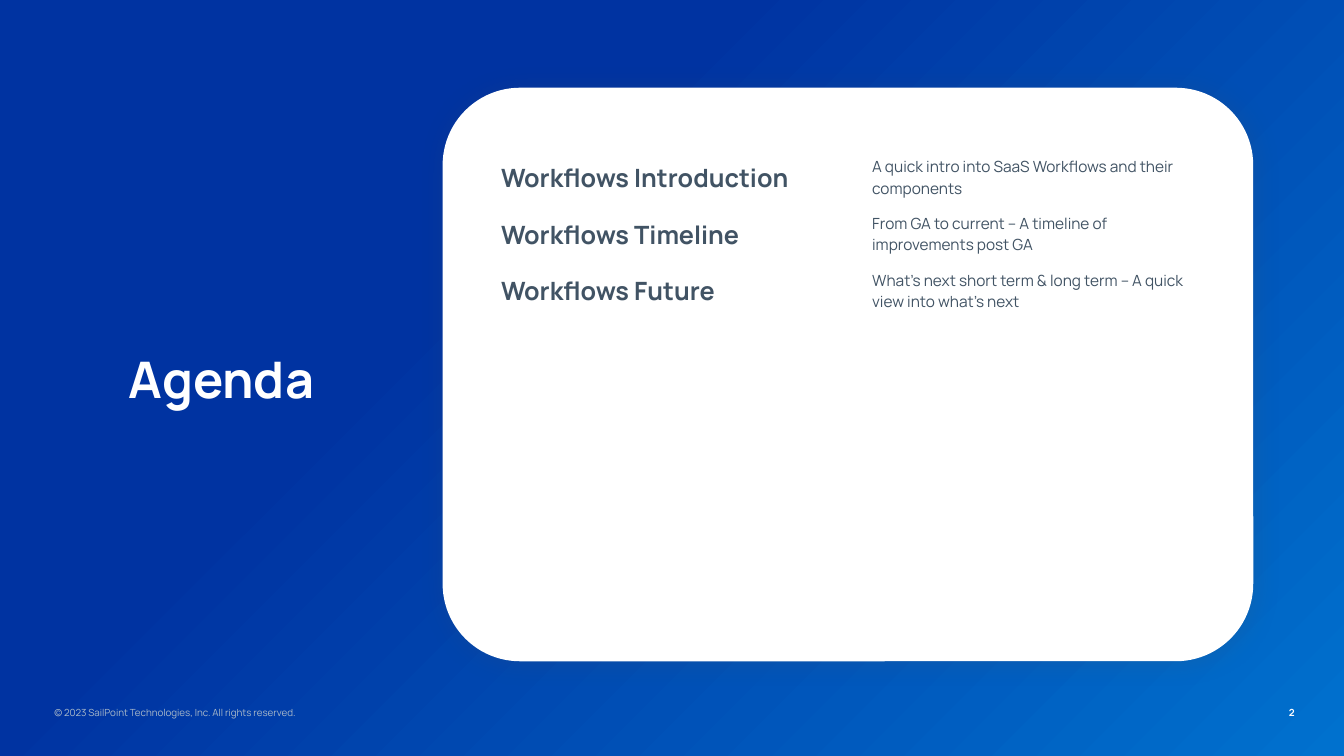
from lxml import etree
from pptx import Presentation
from pptx.dml.color import RGBColor
from pptx.enum import shapes, text
from pptx.oxml import ns
from pptx.util import Inches, Pt

# Content
TITLE = "Agenda"
AGENDA = [
    ("Workflows Introduction", "A quick intro into SaaS Workflows and their components"),
    ("Workflows Timeline", "From GA to current – A timeline of improvements post GA"),
    ("Workflows Future", "What’s next short term & long term – A quick view into what’s next"),
]
COPYRIGHT = "© 2023 SailPoint Technologies, Inc. All rights reserved."
PAGE_NUMBER = "2"

# Style
FONT = "Manrope"
NAVY = RGBColor(0x00, 0x33, 0xA1)
BLUE = RGBColor(0x00, 0x71, 0xCE)
SLATE = RGBColor(0x41, 0x53, 0x64)
MIST = RGBColor(0xAB, 0xBA, 0xC9)
WHITE = RGBColor(0xFF, 0xFF, 0xFF)
ROW_COUNT, ROW_HEIGHT = 8, 4.51 / 8
COLUMN_WIDTHS = (3.68, 3.53)
COLUMN_FONTS = ((18, True), (11, False))


def write(frame, words, size, color, bold=False, align=text.PP_ALIGN.LEFT):
    frame.text = words
    paragraph = frame.paragraphs[0]
    paragraph.alignment = align
    font = paragraph.runs[0].font
    font.name, font.size, font.bold = FONT, Pt(size), bold
    font.color.rgb = color


def add_footer(slide, left, width, words, color, bold, align):
    footer = slide.shapes.add_textbox(Inches(left), Inches(6.94), Inches(width), Inches(0.25))
    footer.text_frame.word_wrap = True
    footer.text_frame.vertical_anchor = text.MSO_ANCHOR.MIDDLE
    write(footer.text_frame, words, 7, color, bold, align)


def add_soft_shadow(shape):
    shape.shadow.inherit = False
    effects = shape._element.spPr.find(ns.qn("a:effectLst"))
    shadow = etree.SubElement(effects, ns.qn("a:outerShdw"), blurRad=str(Pt(18.4)),
                              dist=str(Pt(3)), dir=str(45 * 60000), algn="tl", rotWithShape="0")
    color = etree.SubElement(shadow, ns.qn("a:srgbClr"), val=str(SLATE))
    etree.SubElement(color, ns.qn("a:alpha"), val="20000")


def main():
    prs = Presentation()
    prs.slide_width, prs.slide_height = Inches(13.33), Inches(7.5)
    slide = prs.slides.add_slide(prs.slide_layouts[5])

    # Gradient background
    backdrop = slide.background.fill
    backdrop.gradient()
    backdrop.gradient_angle = 315
    for stop, (position, color) in zip(backdrop.gradient_stops, ((0.35, NAVY), (1, BLUE))):
        stop.position, stop.color.rgb = position, color

    # White card
    card = slide.shapes.add_shape(shapes.MSO_SHAPE.ROUNDED_RECTANGLE,
                                  Inches(4.39), Inches(0.87), Inches(8.04), Inches(5.69))
    card.adjustments[0] = 0.135
    card.fill.solid()
    card.fill.fore_color.rgb = WHITE
    card.line.fill.background()
    add_soft_shadow(card)

    # Title
    title = slide.shapes.title
    title.left, title.top = Inches(0.44), Inches(2.86)
    title.width, title.height = Inches(3.51), Inches(1.79)
    title.text_frame.auto_size = text.MSO_AUTO_SIZE.NONE
    title.text_frame.vertical_anchor = text.MSO_ANCHOR.MIDDLE
    write(title.text_frame, TITLE, 36, WHITE, True, text.PP_ALIGN.CENTER)

    # Footer
    add_footer(slide, 12.07, 0.87, PAGE_NUMBER, WHITE, True, text.PP_ALIGN.RIGHT)
    add_footer(slide, 0.44, 4.24, COPYRIGHT, MIST, False, text.PP_ALIGN.LEFT)

    # Agenda table, with spare rows below the topics
    agenda = slide.shapes.add_table(ROW_COUNT, len(COLUMN_WIDTHS), Inches(4.87), Inches(1.48),
                                    Inches(sum(COLUMN_WIDTHS)),
                                    Inches(ROW_COUNT * ROW_HEIGHT)).table
    agenda.first_row = agenda.horz_banding = False
    for column, width in zip(agenda.columns, COLUMN_WIDTHS):
        column.width = Inches(width)
    for row in agenda.rows:
        row.height = Inches(ROW_HEIGHT)
    for cell in agenda.iter_cells():
        cell.fill.background()
        cell.vertical_anchor = text.MSO_ANCHOR.MIDDLE
    for row, topic in zip(agenda.rows, AGENDA):
        for cell, words, (size, bold) in zip(row.cells, topic, COLUMN_FONTS):
            write(cell.text_frame, words, size, SLATE, bold)

    prs.save("out.pptx")


if __name__ == "__main__":
    main()
